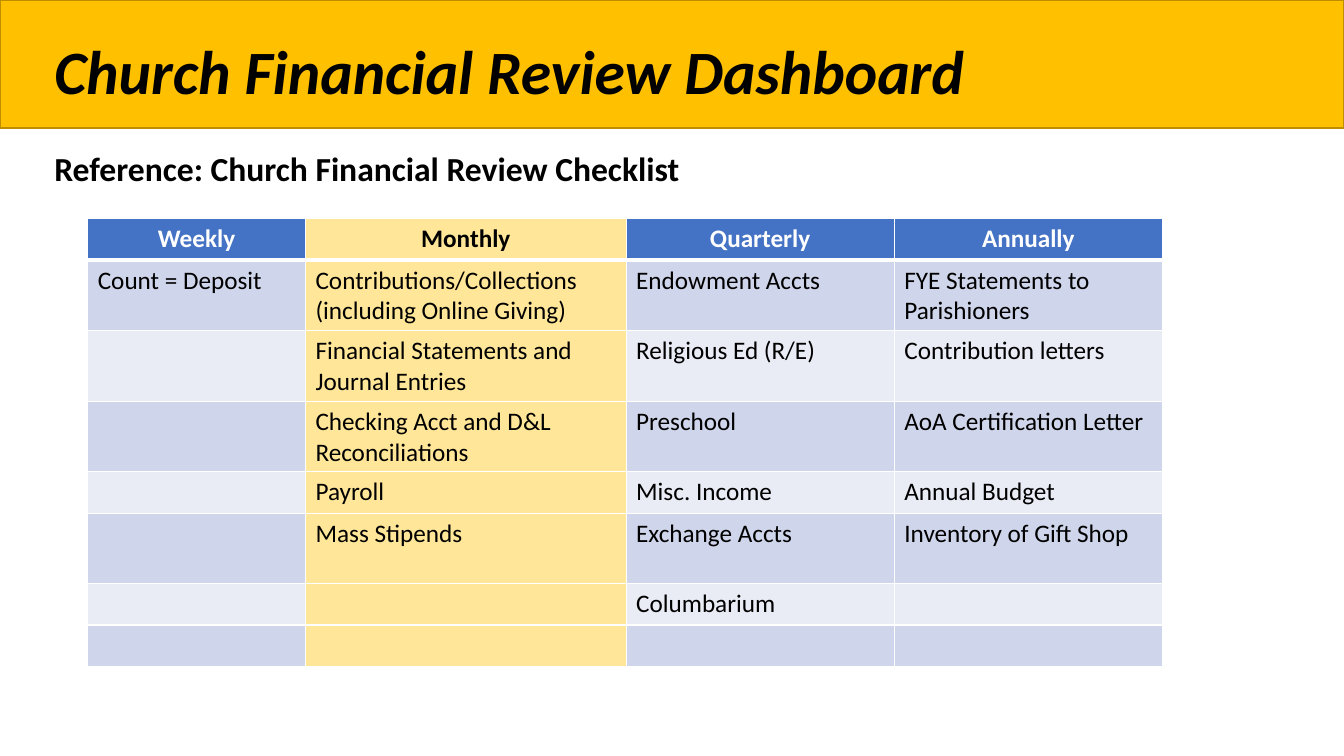
from dataclasses import dataclass

from lxml.etree import SubElement as Sub
from pptx import Presentation
from pptx.dml.color import RGBColor as RGB
from pptx.enum.shapes import MSO_SHAPE as Shape
from pptx.enum.text import PP_ALIGN as Align
from pptx.oxml.ns import qn
from pptx.util import Inches, Pt


@dataclass(frozen=True)
class Theme:
    face: str = "Calibri"
    black: str = "000000"
    white: str = "FFFFFF"
    gold: str = "FFC000"
    edge: str = "BD8E00"
    cream: str = "FFE699"
    blue: str = "4472C4"
    bands: tuple = ("CFD5EA", "E9EBF5")
    title: int = 44
    lead: int = 24
    body: int = 18


class Page:
    def __init__(self, slide, theme):
        self.shapes = slide.shapes
        self.theme = theme

    def style(self, para, size, color, bold=False, slant=False):
        font = para.font
        font.name, font.size = self.theme.face, Pt(size)
        font.bold, font.italic = bold, slant
        font.color.rgb = RGB.from_string(color)

    def banner(self, *box):
        bar = self.shapes.add_shape(Shape.RECTANGLE, *map(Inches, box))
        bar.shadow.inherit = False
        bar.fill.solid()
        bar.fill.fore_color.rgb = RGB.from_string(self.theme.gold)
        bar.line.color.rgb = RGB.from_string(self.theme.edge)
        bar.line.width = Pt(1)

    def heading(self, title, lead, *box):
        frame = self.shapes.add_textbox(*map(Inches, box)).text_frame
        frame.word_wrap = True
        top, sub = frame.paragraphs[0], frame.add_paragraph()
        top.text, sub.text = title, lead
        sub.space_before = Pt(29)
        self.style(top, self.theme.title, self.theme.black, True, True)
        self.style(sub, self.theme.lead, self.theme.black, True)

    def border(self, cell, row):
        props = cell._tc.get_or_add_tcPr()
        thick = {"lnB": row == 0, "lnT": row == 1}
        for side in ("lnL", "lnR", "lnT", "lnB"):
            width = Pt(3 if thick.get(side) else 1)
            line = Sub(props, qn("a:" + side), w=str(width))
            fill = Sub(line, qn("a:solidFill"))
            Sub(fill, qn("a:srgbClr"), val=self.theme.white)

    def cell(self, cell, text, row, marked):
        theme, head = self.theme, row == 0
        self.border(cell, row)
        fill = theme.blue if head else theme.bands[(row - 1) % 2]
        cell.fill.solid()
        cell.fill.fore_color.rgb = RGB.from_string(theme.cream if marked else fill)
        cell.text = text
        para = cell.text_frame.paragraphs[0]
        para.alignment = Align.CENTER if head else Align.LEFT
        ink = theme.white if head and not marked else theme.black
        self.style(para, theme.body, ink, head)

    def table(self, rows, left, top, widths, heights, mark):
        box = map(Inches, (left, top, sum(widths), sum(heights)))
        grid = self.shapes.add_table(len(rows), len(widths), *box).table
        for col, width in zip(grid.columns, widths):
            col.width = Inches(width)
        for r, (row, height) in enumerate(zip(rows, heights)):
            grid.rows[r].height = Inches(height)
            for c, text in enumerate(row):
                self.cell(grid.cell(r, c), text, r, c == mark)


TASKS = [
    ("Weekly", "Monthly", "Quarterly", "Annually"),
    ("Count = Deposit", "Contributions/Collections (including Online Giving)",
     "Endowment Accts", "FYE Statements to Parishioners"),
    ("", "Financial Statements and Journal Entries",
     "Religious Ed (R/E)", "Contribution letters"),
    ("", "Checking Acct and D&L Reconciliations",
     "Preschool", "AoA Certification Letter"),
    ("", "Payroll", "Misc. Income", "Annual Budget"),
    ("", "Mass Stipends", "Exchange Accts", "Inventory of Gift Shop"),
    ("", "", "Columbarium", ""),
    ("", "", "", ""),
]


def main():
    deck = Presentation()
    deck.slide_width, deck.slide_height = Inches(13.33), Inches(7.5)
    page = Page(deck.slides.add_slide(deck.slide_layouts[6]), Theme())

    # Title band and heading
    page.banner(0, 0, 13.33, 1.27)
    page.heading("Church Financial Review Dashboard",
                 "Reference: Church Financial Review Checklist",
                 0.44, 0.28, 12.44, 1.7)

    # Review schedule, with the monthly column marked
    low, tall = 0.41, 0.7
    page.table(TASKS, 0.87, 2.17, (2.16, 3.18, 2.66, 2.66),
               (low, tall, tall, tall, low, tall, low, low), mark=1)

    deck.save("out.pptx")


if __name__ == "__main__":
    main()
